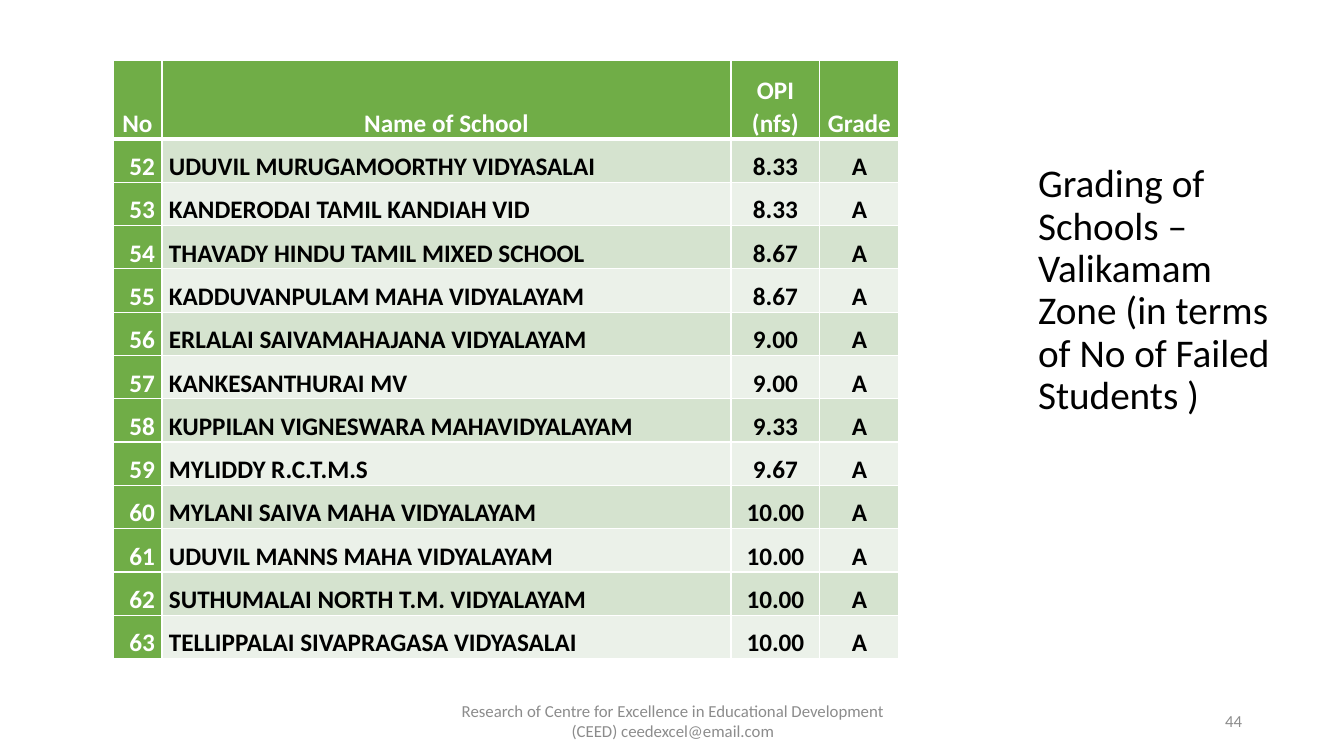
from lxml import etree
from pptx import Presentation
from pptx.dml.color import RGBColor
from pptx.enum.text import MSO_ANCHOR, MSO_AUTO_SIZE, PP_ALIGN
from pptx.oxml.ns import qn
from pptx.util import Pt

LEFT, CENTER, RIGHT = PP_ALIGN.LEFT, PP_ALIGN.CENTER, PP_ALIGN.RIGHT
TOP, MIDDLE, BOTTOM = MSO_ANCHOR.TOP, MSO_ANCHOR.MIDDLE, MSO_ANCHOR.BOTTOM
NO_AUTOFIT = MSO_AUTO_SIZE.NONE

EMU_PER_PX = 914400 / 100.8
FONT = "Calibri"
WHITE, BLACK, GRAY = "FFFFFF", "000000", "8C8C8C"
GREEN = "70AD47"
BANDS = ("D5E3CF", "EBF1E9")

COLUMN_WIDTHS = (49, 569, 89, 79)
COLUMN_ALIGNMENTS = (RIGHT, LEFT, CENTER, CENTER)
HEADER_HEIGHT = 79
HEADERS = ("No", "Name of School", "OPI (nfs)", "Grade")
FIRST_NUMBER = 52
GRADE = "A"
SCHOOLS = (
    ("UDUVIL MURUGAMOORTHY VIDYASALAI", "8.33"),
    ("KANDERODAI TAMIL KANDIAH VID", "8.33"),
    ("THAVADY HINDU TAMIL MIXED SCHOOL", "8.67"),
    ("KADDUVANPULAM MAHA VIDYALAYAM", "8.67"),
    ("ERLALAI SAIVAMAHAJANA VIDYALAYAM", "9.00"),
    ("KANKESANTHURAI MV", "9.00"),
    ("KUPPILAN VIGNESWARA MAHAVIDYALAYAM", "9.33"),
    ("MYLIDDY R.C.T.M.S", "9.67"),
    ("MYLANI SAIVA MAHA VIDYALAYAM", "10.00"),
    ("UDUVIL MANNS MAHA VIDYALAYAM", "10.00"),
    ("SUTHUMALAI NORTH T.M. VIDYALAYAM", "10.00"),
    ("TELLIPPALAI SIVAPRAGASA VIDYASALAI", "10.00"),
)


def px(length):
    return round(length * EMU_PER_PX)


def color(value):
    return RGBColor.from_string(value)


def write_text(frame, text, size=18, fill=BLACK, bold=False, align=LEFT, anchor=TOP, spacing=1.0):
    frame.word_wrap = True
    frame.vertical_anchor = anchor
    paragraph = frame.paragraphs[0]
    paragraph.alignment = align
    paragraph.line_spacing = spacing
    run = paragraph.add_run()
    run.text = text
    run.font.name = FONT
    run.font.size = Pt(size)
    run.font.bold = bold
    run.font.color.rgb = color(fill)


def add_borders(cell, **widths):
    properties = cell._tc.get_or_add_tcPr()
    for side in "LRTB":
        line = etree.SubElement(properties, qn(f"a:ln{side}"), w=str(Pt(widths.get(side, 1))))
        solid = etree.SubElement(line, qn("a:solidFill"))
        etree.SubElement(solid, qn("a:srgbClr"), val=WHITE)


def format_cell(cell, text, background, fill, align, **borders):
    cell.margin_left = cell.margin_right = px(7)
    cell.margin_top = cell.margin_bottom = 0
    cell.vertical_anchor = BOTTOM
    add_borders(cell, **borders)
    cell.fill.solid()
    cell.fill.fore_color.rgb = color(background)
    write_text(cell.text_frame, text, fill=fill, bold=True, align=align, anchor=None, spacing=1.07)


def add_school_table(slide, left, top, width, height):
    shape = slide.shapes.add_table(
        len(SCHOOLS) + 1, len(HEADERS), px(left), px(top), px(width), px(height)
    )
    table = shape.table
    table.horz_banding = False
    for column, column_width in zip(table.columns, COLUMN_WIDTHS):
        column.width = px(column_width * width / sum(COLUMN_WIDTHS))
    for index, row in enumerate(table.rows):
        row.height = px((height - HEADER_HEIGHT) / len(SCHOOLS) if index else HEADER_HEIGHT)

    for column, header in enumerate(HEADERS):
        format_cell(table.cell(0, column), header, GREEN, WHITE, CENTER, B=3)
    for row, (school, index_value) in enumerate(SCHOOLS, 1):
        values = (str(FIRST_NUMBER + row - 1), school, index_value, GRADE)
        for column, (value, align) in enumerate(zip(values, COLUMN_ALIGNMENTS)):
            background, fill = (BANDS[(row - 1) % 2], BLACK) if column else (GREEN, WHITE)
            format_cell(table.cell(row, column), value, background, fill, align, T=3 if row == 1 else 1)


def place_title(slide, left, top, width, height):
    title = slide.shapes.title
    title.left, title.top, title.width, title.height = map(px, (left, top, width, height))
    title.text_frame.auto_size = NO_AUTOFIT
    write_text(
        title.text_frame,
        "Grading of Schools – Valikamam Zone (in terms of No of Failed Students )",
        size=28,
        spacing=0.9,
    )


def add_footer_text(slide, text, align, left, top, width, height):
    box = slide.shapes.add_textbox(px(left), px(top), px(width), px(height))
    write_text(box.text_frame, text, size=12, fill=GRAY, align=align, anchor=MIDDLE)


def add_footer(slide, left, top, width, height):
    note = (
        "Research of Centre for Excellence in Educational Development "
        "(CEED) ceedexcel@email.com"
    )
    add_footer_text(slide, note, CENTER, left, top, 454, height)
    add_footer_text(slide, "44", RIGHT, left + width - 302, top, 302, height)


def main():
    presentation = Presentation()
    presentation.slide_width = px(1344)
    presentation.slide_height = px(756)
    slide = presentation.slides.add_slide(presentation.slide_layouts[5])
    place_title(slide, 1028, 159, 266, 146)
    add_school_table(slide, 113, 60, 786, 599)
    add_footer(slide, 446, 701, 806, 40)
    presentation.save("out.pptx")


if __name__ == "__main__":
    main()
